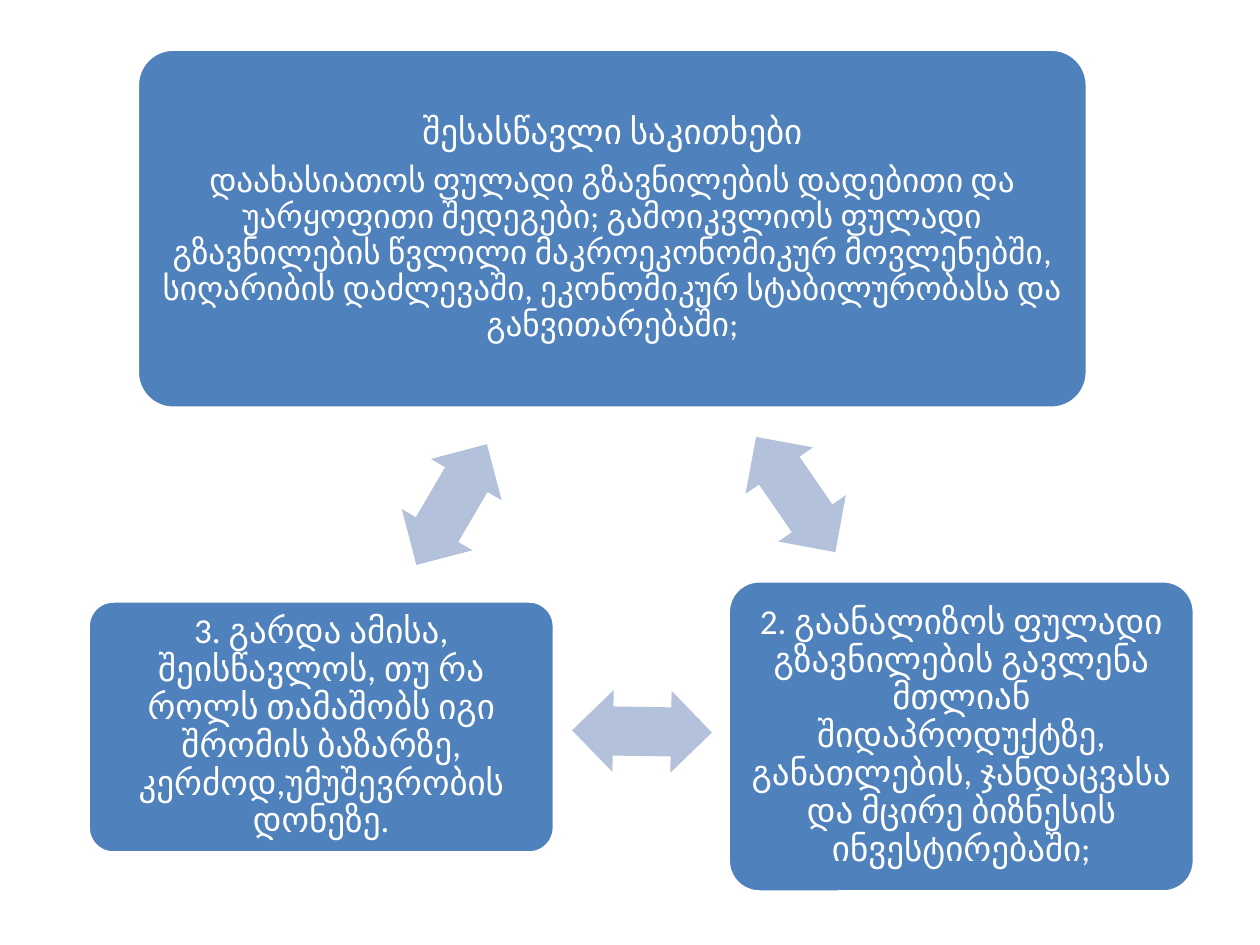
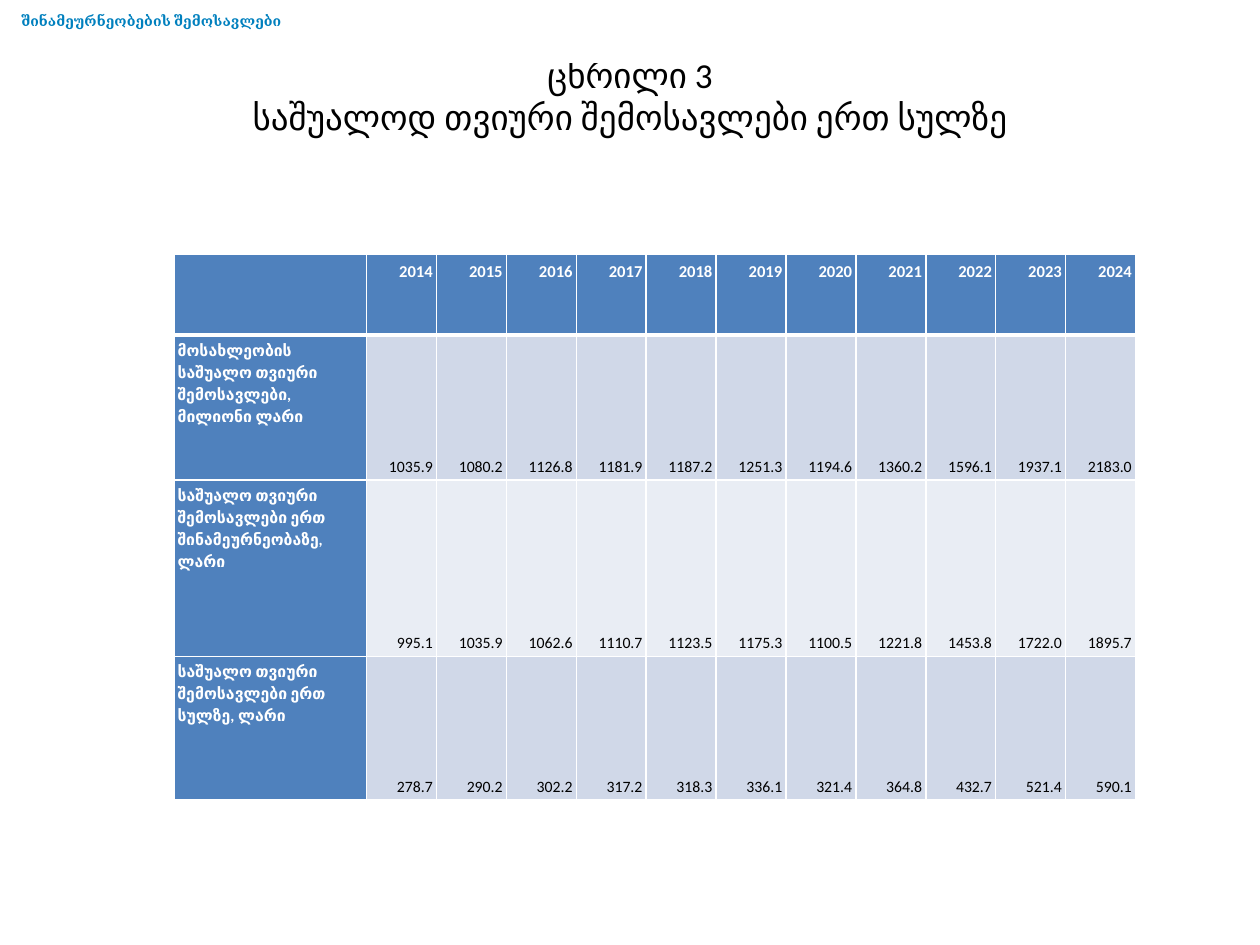
from typing import NamedTuple

from lxml.etree import SubElement
from pptx import Presentation
from pptx.dml.color import RGBColor
from pptx.enum.shapes import MSO_SHAPE
from pptx.enum.text import MSO_ANCHOR, PP_ALIGN
from pptx.oxml.ns import qn
from pptx.util import Inches, Pt

WHITE = RGBColor(0xFF, 0xFF, 0xFF)
BLACK = RGBColor(0x00, 0x00, 0x00)
BLUE = RGBColor(0x4F, 0x81, 0xBD)
ARROW_BLUE = RGBColor(0xB3, 0xC1, 0xDB)
BANNER_BLUE = RGBColor(0x00, 0x80, 0xBE)
BANDS = (RGBColor(0xD0, 0xD8, 0xE8), RGBColor(0xE9, 0xED, 0xF4))


class Line(NamedTuple):
    text: str
    size: float = 20


class Box(NamedTuple):
    left: float
    top: float
    width: float
    height: float
    lines: tuple[Line, ...]


class Arrow(NamedTuple):
    left: float
    top: float
    angle: float


class IncomeRow(NamedTuple):
    label: str
    height: float
    values: str


BOXES = (
    Box(1.09, 0.39, 7.54, 2.85, (
        Line("შესასწავლი საკითხები"),
        Line("დაახასიათოს ფულადი გზავნილების დადებითი და უარყოფითი შედეგები; "
             "გამოიკვლიოს ფულადი გზავნილების წვლილი მაკროეკონომიკურ მოვლენებში, "
             "სიღარიბის დაძლევაში, ეკონომიკურ სტაბილურობასა და განვითარებაში;", 19),
    )),
    Box(5.78, 4.61, 3.7, 2.47, (
        Line("2. გაანალიზოს ფულადი გზავნილების გავლენა მთლიან შიდაპროდუქტზე, "
             "განათლების, ჯანდაცვასა და მცირე ბიზნესის ინვესტირებაში;"),
    )),
    Box(0.7, 4.77, 3.7, 2, (
        Line("3. გარდა ამისა, შეისწავლოს, თუ რა როლს თამაშობს იგი შრომის ბაზარზე, "
             "კერძოდ,უმუშევრობის დონეზე."),
    )),
)
ARROWS = (Arrow(5.76, 3.6, 55.5), Arrow(4.54, 5.48, 180.9), Arrow(3.03, 3.68, 300.3))

YEARS = range(2014, 2025)
HEADER_HEIGHT = 0.64
LABEL_WIDTH = 1.53
YEAR_WIDTH = 0.555
INCOME_ROWS = (
    IncomeRow("მოსახლეობის საშუალო თვიური შემოსავლები, მილიონი ლარი", 1.15,
              "1035.9 1080.2 1126.8 1181.9 1187.2 1251.3 1194.6 1360.2 1596.1 1937.1 2183.0"),
    IncomeRow("საშუალო თვიური შემოსავლები ერთ შინამეურნეობაზე, ლარი", 1.4,
              "995.1 1035.9 1062.6 1110.7 1123.5 1175.3 1100.5 1221.8 1453.8 1722.0 1895.7"),
    IncomeRow("საშუალო თვიური შემოსავლები ერთ სულზე, ლარი", 1.14,
              "278.7 290.2 302.2 317.2 318.3 336.1 321.4 364.8 432.7 521.4 590.1"),
)


def write_text(tf, text: str, *, size: float, color=WHITE, font="Calibri", bold=False,
               align=PP_ALIGN.CENTER, spacing=1.0, after=0.0) -> None:
    """Fill the first free paragraph of a text frame, or add one."""
    p = tf.add_paragraph() if tf.text else tf.paragraphs[0]
    p.text = text
    p.alignment = align
    p.line_spacing = spacing
    p.space_after = Pt(after)
    for r in p.runs:
        r.font.size = Pt(size)
        r.font.name = font
        r.font.bold = bold
        r.font.color.rgb = color


def set_margins(target, left: float, top: float, right: float, bottom: float) -> None:
    target.margin_left, target.margin_top = Inches(left), Inches(top)
    target.margin_right, target.margin_bottom = Inches(right), Inches(bottom)


def add_filled(slide, kind, left: float, top: float, width: float, height: float, fill):
    sp = slide.shapes.add_shape(kind, Inches(left), Inches(top), Inches(width), Inches(height))
    sp.shadow.inherit = False
    sp.fill.solid()
    sp.fill.fore_color.rgb = fill
    sp.line.fill.background()
    return sp


def add_box(slide, box: Box) -> None:
    sp = add_filled(slide, MSO_SHAPE.ROUNDED_RECTANGLE, *box[:4], BLUE)
    sp.adjustments[0] = 0.1
    sp.line.color.rgb = WHITE
    sp.line.width = Pt(2)
    tf = sp.text_frame
    tf.word_wrap = True
    tf.vertical_anchor = MSO_ANCHOR.MIDDLE
    set_margins(tf, 0.08, 0.08, 0.08, 0.08)
    for line in box.lines:
        write_text(tf, line.text, size=line.size, spacing=0.9, after=7)


def add_arrow(slide, arrow: Arrow) -> None:
    sp = add_filled(slide, MSO_SHAPE.LEFT_RIGHT_ARROW, arrow.left, arrow.top, 1.11, 0.65,
                    ARROW_BLUE)
    sp.adjustments[0] = 0.6
    sp.adjustments[1] = 0.5
    sp.rotation = arrow.angle


def set_borders(cell, top: float, bottom: float) -> None:
    """White cell borders; they must come before the fill in tcPr."""
    tc_pr = cell._tc.get_or_add_tcPr()
    widths = {"a:lnL": 1, "a:lnR": 1, "a:lnT": top, "a:lnB": bottom}
    for i, (tag, width) in enumerate(widths.items()):
        ln = SubElement(tc_pr, qn(tag), w=str(Pt(width)))
        SubElement(SubElement(ln, qn("a:solidFill")), qn("a:srgbClr"), val=str(WHITE))
        tc_pr.insert(i, ln)


def fill_cell(cell, text: str, row: int, col: int) -> None:
    is_header, is_label = row == 0, col == 0
    is_value = not (is_header or is_label)
    cell.fill.solid()
    cell.fill.fore_color.rgb = BANDS[(row - 1) % 2] if is_value else BLUE
    cell.vertical_anchor = MSO_ANCHOR.BOTTOM if is_value else MSO_ANCHOR.TOP
    set_margins(cell, 0.03, 0.03, 0.03, 0.03)
    set_borders(cell, top=3 if row == 1 else 1, bottom=3 if is_header else 1)
    if text:
        write_text(cell.text_frame, text, size=9.5 if is_header else 9,
                   color=BLACK if is_value else WHITE, bold=not is_value,
                   align=PP_ALIGN.LEFT if is_label else PP_ALIGN.RIGHT,
                   spacing=1.15, after=10)


def add_income_table(slide) -> None:
    grid = [["", *map(str, YEARS)]] + [[row.label, *row.values.split()] for row in INCOME_ROWS]
    heights = [HEADER_HEIGHT, *(row.height for row in INCOME_ROWS)]
    widths = [LABEL_WIDTH] + [YEAR_WIDTH] * len(YEARS)
    table = slide.shapes.add_table(len(heights), len(widths), Inches(1.38), Inches(2.02),
                                   Inches(sum(widths)), Inches(sum(heights))).table
    for column, width in zip(table.columns, widths):
        column.width = Inches(width)
    for r, (texts, height) in enumerate(zip(grid, heights)):
        table.rows[r].height = Inches(height)
        for c, text in enumerate(texts):
            fill_cell(table.cell(r, c), text, r, c)


def add_title(slide, text: str) -> None:
    tf = slide.shapes.add_textbox(Inches(0.5), Inches(0.3), Inches(9), Inches(1.25)).text_frame
    tf.word_wrap = True
    tf.vertical_anchor = MSO_ANCHOR.MIDDLE
    set_margins(tf, 0.1, 0.05, 0.1, 0.38)
    write_text(tf, text, size=20, color=BLACK)


def add_banner(slide, text: str) -> None:
    tf = add_filled(slide, MSO_SHAPE.RECTANGLE, 0, 0, 10, 0.5, WHITE).text_frame
    tf.word_wrap = True
    tf.vertical_anchor = MSO_ANCHOR.TOP
    set_margins(tf, 0.17, 0.1, 0.1, 0)
    write_text(tf, text, size=8, color=BANNER_BLUE, font="Cambria", bold=True,
               align=PP_ALIGN.LEFT)


def main() -> None:
    prs = Presentation()
    prs.slide_width, prs.slide_height = Inches(10), Inches(7.5)
    blank = prs.slide_layouts[6]

    # Research questions
    s = prs.slides.add_slide(blank)
    for box in BOXES:
        add_box(s, box)
    for arrow in ARROWS:
        add_arrow(s, arrow)

    # Household income table
    s = prs.slides.add_slide(blank)
    add_title(s, "ცხრილი 3\nსაშუალოდ თვიური შემოსავლები ერთ სულზე")
    add_income_table(s)
    add_banner(s, "შინამეურნეობების შემოსავლები")

    prs.save("out.pptx")


if __name__ == "__main__":
    main()
